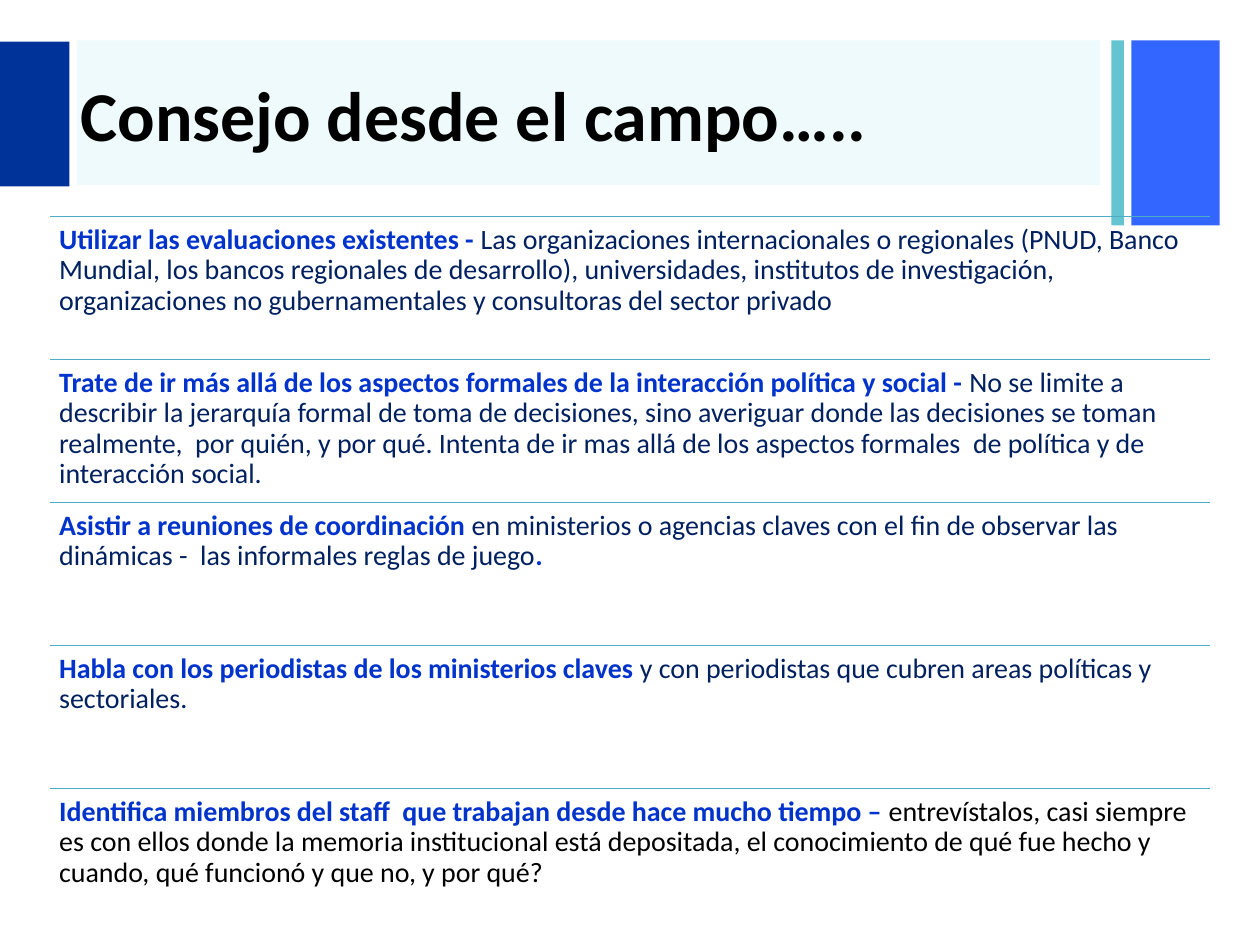
from dataclasses import dataclass

from lxml.etree import SubElement
from pptx import Presentation
from pptx.dml.color import RGBColor
from pptx.enum.shapes import MSO_CONNECTOR, MSO_SHAPE
from pptx.enum.text import MSO_ANCHOR
from pptx.oxml.ns import qn
from pptx.slide import Slide
from pptx.text.text import TextFrame
from pptx.util import Inches, Pt


@dataclass(frozen=True)
class Theme:
    font: str = "Calibri"
    title_size: int = 40
    body_size: int = 16
    black: str = "000000"
    heading: str = "0033CC"
    body: str = "002060"
    rule: str = "4BACC6"
    bright_blue: str = "3366FF"
    teal: str = "65C4D2"
    title_band: str = "14C5D0"
    dark_blue: str = "003399"


@dataclass(frozen=True)
class Block:
    left: float
    top: float
    width: float
    height: float
    color: str
    opacity: int = 100


@dataclass(frozen=True)
class Advice:
    heading: str
    detail: str
    ending: str = ""
    detail_color: str = Theme.body


THEME = Theme()
ROWS_LEFT, ROWS_WIDTH = 0.4, 9.2
FIRST_ROW, LAST_ROW = 1.72, 6.26
ROW_INSET = 0.07

BLOCKS = [
    Block(8.98, 0.32, 0.7, 1.47, THEME.bright_blue),
    Block(8.82, 0.32, 0.1, 1.47, THEME.teal),
    Block(0.61, 0.32, 8.12, 1.15, THEME.title_band, 7),
    Block(0, 0.33, 0.55, 1.15, THEME.dark_blue),
]

ADVICE = [
    Advice(
        "Utilizar las evaluaciones existentes - ",
        "Las organizaciones internacionales o regionales (PNUD, Banco Mundial, los bancos "
        "regionales de desarrollo), universidades, institutos de investigación, "
        "organizaciones no gubernamentales y consultoras del sector privado",
    ),
    Advice(
        "Trate de ir más allá de los aspectos formales de la interacción política y social - ",
        "No se limite a describir la jerarquía formal de toma de decisiones, sino averiguar "
        "donde las decisiones se toman realmente,  por quién, y por qué. Intenta de ir mas "
        "allá de los aspectos formales  de política y de interacción social.",
    ),
    Advice(
        "Asistir a reuniones de coordinación ",
        "en ministerios o agencias claves con el fin de observar las dinámicas -  las "
        "informales reglas de juego",
        ending=".",
    ),
    Advice(
        "Habla con los periodistas de los ministerios claves ",
        "y con periodistas que cubren areas políticas y sectoriales.",
    ),
    Advice(
        "Identifica miembros del staff  que trabajan desde hace mucho tiempo – ",
        "entrevístalos, casi siempre es con ellos donde la memoria institucional está "
        "depositada, el conocimiento de qué fue hecho y cuando, qué funcionó y que no, "
        "y por qué?",
        detail_color=THEME.black,
    ),
]


def add_block(slide: Slide, block: Block) -> None:
    shape = slide.shapes.add_shape(
        MSO_SHAPE.RECTANGLE,
        Inches(block.left), Inches(block.top), Inches(block.width), Inches(block.height),
    )
    shape.shadow.inherit = False
    shape.fill.solid()
    shape.fill.fore_color.rgb = RGBColor.from_string(block.color)
    shape.line.fill.background()
    if block.opacity < 100:
        color = shape.fill._xPr.find(qn("a:solidFill"))[0]
        SubElement(color, qn("a:alpha")).set("val", str(block.opacity * 1000))


def add_text_frame(
    slide: Slide, left: float, top: float, width: float, height: float
) -> TextFrame:
    box = slide.shapes.add_textbox(Inches(left), Inches(top), Inches(width), Inches(height))
    box.text_frame.word_wrap = True
    return box.text_frame


def add_title(slide: Slide, text: str) -> None:
    frame = add_text_frame(slide, 0.54, 0.34, 8.27, 1.12)
    frame.vertical_anchor = MSO_ANCHOR.MIDDLE
    paragraph = frame.paragraphs[0]
    paragraph.text = text
    font = paragraph.font
    font.name, font.size, font.bold = THEME.font, Pt(THEME.title_size), True
    font.color.rgb = RGBColor.from_string(THEME.black)


def add_rule(slide: Slide, top: float) -> None:
    rule = slide.shapes.add_connector(
        MSO_CONNECTOR.STRAIGHT,
        Inches(ROWS_LEFT), Inches(top), Inches(ROWS_LEFT + ROWS_WIDTH), Inches(top),
    )
    rule.line.color.rgb = RGBColor.from_string(THEME.rule)
    rule.line.width = Pt(0.75)
    SubElement(rule._element.spPr, qn("a:effectLst"))


def add_advice(slide: Slide, advice: Advice, top: float, height: float) -> None:
    add_rule(slide, top)
    frame = add_text_frame(slide, ROWS_LEFT, top, ROWS_WIDTH, height)
    frame.margin_left = frame.margin_right = Inches(ROW_INSET)
    frame.margin_top = frame.margin_bottom = Inches(ROW_INSET)
    paragraph = frame.paragraphs[0]
    paragraph.line_spacing = 0.9
    paragraph.font.name = THEME.font
    paragraph.font.size = Pt(THEME.body_size)
    parts = [
        (advice.heading, THEME.heading, True),
        (advice.detail, advice.detail_color, False),
        (advice.ending, THEME.heading, True),
    ]
    for text, color, bold in parts:
        if text:
            run = paragraph.add_run()
            run.text = text
            run.font.bold = bold
            run.font.color.rgb = RGBColor.from_string(color)


def main() -> None:
    presentation = Presentation()
    presentation.slide_width, presentation.slide_height = Inches(10), Inches(7.5)
    slide = presentation.slides.add_slide(presentation.slide_layouts[6])
    for block in BLOCKS:
        add_block(slide, block)
    add_title(slide, "Consejo desde el campo…..")
    pitch = (LAST_ROW - FIRST_ROW) / (len(ADVICE) - 1)
    for index, advice in enumerate(ADVICE):
        add_advice(slide, advice, FIRST_ROW + index * pitch, pitch)
    presentation.save("out.pptx")


if __name__ == "__main__":
    main()
